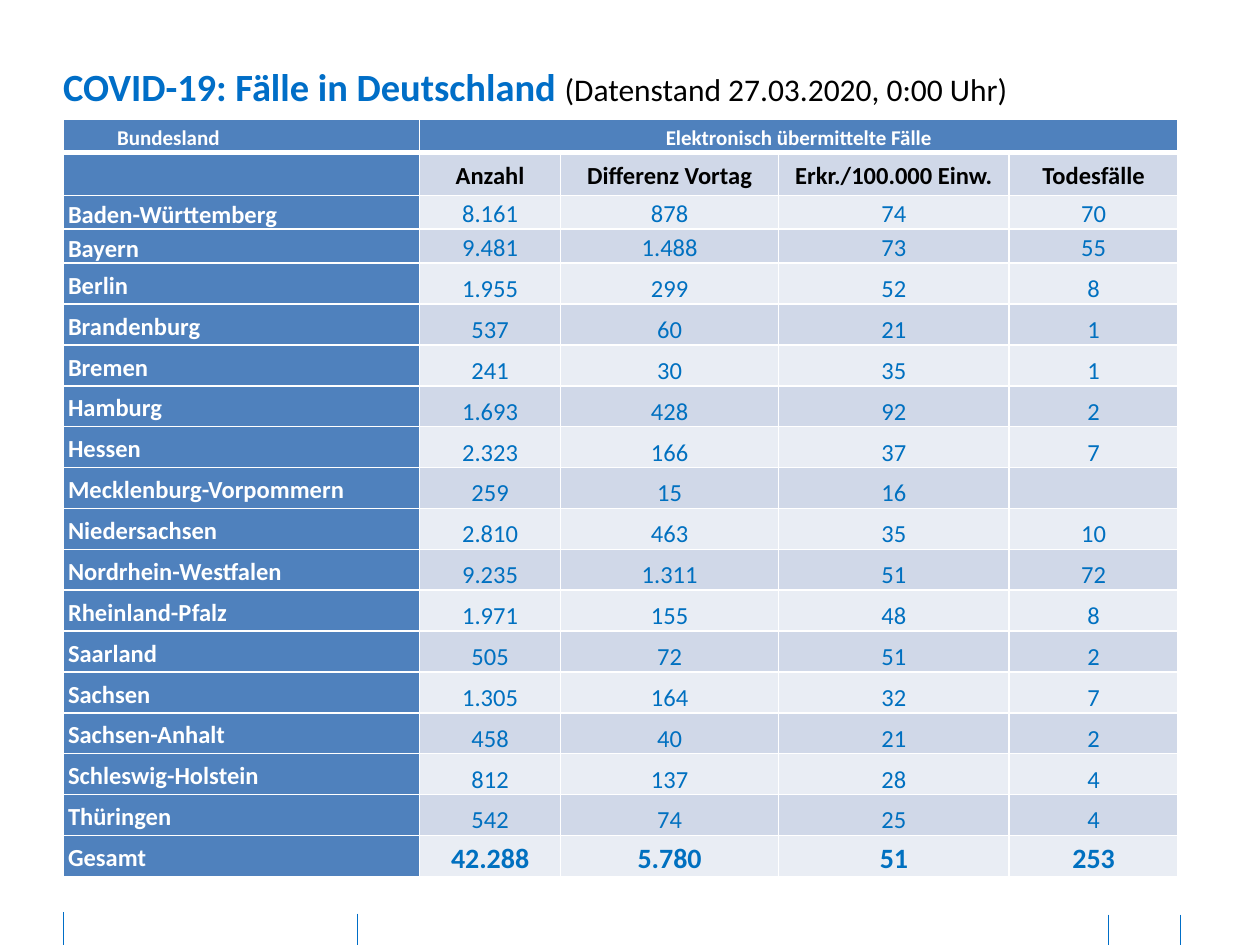
from lxml import etree
from pptx import Presentation
from pptx import util as u
from pptx.dml.color import RGBColor
from pptx.enum import shapes, text
from pptx.oxml.ns import qn

BRAND, HEADER, VALUE = "006EC7", "4F81BD", "0070C0"
WHITE, BLACK = "FFFFFF", "000000"
BANDS = ("E9EDF4", "D0D8E8")
COLUMNS = (2.83, 1.12, 1.73, 1.83, 1.34)
HEADINGS = ("Anzahl", "Differenz Vortag", "Erkr./100.000 Einw.", "Todesfälle")
CASES = (
    ("Baden-Württemberg", "8.161", "878", "74", "70"),
    ("Bayern", "9.481", "1.488", "73", "55"),
    ("Berlin", "1.955", "299", "52", "8"),
    ("Brandenburg", "537", "60", "21", "1"),
    ("Bremen", "241", "30", "35", "1"),
    ("Hamburg", "1.693", "428", "92", "2"),
    ("Hessen", "2.323", "166", "37", "7"),
    ("Mecklenburg-Vorpommern", "259", "15", "16", ""),
    ("Niedersachsen", "2.810", "463", "35", "10"),
    ("Nordrhein-Westfalen", "9.235", "1.311", "51", "72"),
    ("Rheinland-Pfalz", "1.971", "155", "48", "8"),
    ("Saarland", "505", "72", "51", "2"),
    ("Sachsen", "1.305", "164", "32", "7"),
    ("Sachsen-Anhalt", "458", "40", "21", "2"),
    ("Schleswig-Holstein", "812", "137", "28", "4"),
    ("Thüringen", "542", "74", "25", "4"),
    ("Gesamt", "42.288", "5.780", "51", "253"),
)


def rgb(value):
    """Turn a hex string into a colour."""
    return RGBColor.from_string(value)


def add_run(p, words, size, color, bold):
    """Append one styled run to a paragraph."""
    r = p.add_run()
    r.text = words
    r.font.name = "Calibri"
    r.font.size = u.Pt(size)
    r.font.bold = bold
    r.font.color.rgb = rgb(color)


def add_title(s, left, top, width, height):
    """Place the headline and its date in the given box."""
    sp = s.shapes.add_textbox(*map(u.Inches, (left, top, width, height)))
    tf = sp.text_frame
    tf.word_wrap = True
    tf.auto_size = text.MSO_AUTO_SIZE.SHAPE_TO_FIT_TEXT
    tf.margin_left = tf.margin_right = tf.margin_top = tf.margin_bottom = 0
    p = tf.paragraphs[0]
    add_run(p, "COVID-19: Fälle in Deutschland ", 22, BRAND, True)
    add_run(p, "(Datenstand 27.03.2020, 0:00 Uhr)", 18, BLACK, False)


def set_borders(cell, top=1, bottom=1):
    """Draw white borders on all sides of a cell."""
    tc_pr = cell._tc.get_or_add_tcPr()
    sides = (("lnL", 1), ("lnR", 1), ("lnT", top), ("lnB", bottom))
    for i, (side, points) in enumerate(sides):
        ln = etree.Element(qn(f"a:{side}"), w=str(u.Pt(points)))
        fill = etree.SubElement(ln, qn("a:solidFill"))
        etree.SubElement(fill, qn("a:srgbClr"), val=WHITE)
        tc_pr.insert(i, ln)


def fill_cell(cell, words, fill, color=WHITE, size=14, bold=True, centred=True, numeric=False):
    """Style a cell as a label or a number and write its text."""
    cell.fill.solid()
    cell.fill.fore_color.rgb = rgb(fill)
    cell.margin_left = cell.margin_right = u.Inches(0 if numeric else 0.04)
    cell.margin_top = cell.margin_bottom = 0
    cell.vertical_anchor = text.MSO_ANCHOR.BOTTOM if numeric else text.MSO_ANCHOR.MIDDLE
    p = cell.text_frame.paragraphs[0]
    p.alignment = text.PP_ALIGN.CENTER if centred else text.PP_ALIGN.LEFT
    if not numeric:
        p.line_spacing = 1.15
    if words:
        add_run(p, words, size, color, bold)
    else:
        etree.SubElement(p._p, qn("a:endParaRPr"), sz=str(size * 100))


def add_case_table(s, left, top, width, height):
    """Place the table of cases per state in the given box."""
    box = map(u.Inches, (left, top, width, height))
    table = s.shapes.add_table(len(CASES) + 2, len(COLUMNS), *box).table
    table.first_row = table.horz_banding = False
    for column, column_width in zip(table.columns, COLUMNS):
        column.width = u.Inches(column_width)
    heights = [0.26, 0.34, 0.27, 0.27]
    tall_rows = len(CASES) + 2 - len(heights)
    heights += [(height - sum(heights)) / tall_rows] * tall_rows
    for row, row_height in zip(table.rows, heights):
        row.height = u.Inches(row_height)

    table.cell(0, 1).merge(table.cell(0, 4))
    fill_cell(table.cell(0, 0), "Bundesland", HEADER, size=12, centred=False)
    p = table.cell(0, 0).text_frame.paragraphs[0]
    p._p.get_or_add_pPr().set("indent", str(u.Inches(0.39)))
    fill_cell(table.cell(0, 1), "Elektronisch übermittelte Fälle", HEADER, size=12)
    fill_cell(table.cell(1, 0), "", HEADER)
    for c, heading in enumerate(HEADINGS, 1):
        fill_cell(table.cell(1, c), heading, BANDS[1], BLACK)

    for i, (state, *values) in enumerate(CASES):
        total = state == "Gesamt"
        fill_cell(table.cell(i + 2, 0), state, HEADER, centred=False)
        for c, value in enumerate(values, 1):
            fill_cell(table.cell(i + 2, c), value, BANDS[i % 2], VALUE,
                      size=16 if total else 14, bold=total, numeric=True)

    for i, row in enumerate(table.rows):
        for cell in row.cells:
            set_borders(cell, top=3 if i == 1 else 1, bottom=3 if i == 0 else 1)


def add_footer_rules(s, bottom, rules):
    """Draw vertical rules from each given top down to the bottom."""
    for x, top in rules:
        sp = s.shapes.add_connector(shapes.MSO_CONNECTOR.STRAIGHT,
                                    *map(u.Inches, (x, top, x, bottom)))
        sp.line.color.rgb = rgb(BRAND)
        sp.line.width = u.Pt(0.5)
        etree.SubElement(sp._element.spPr, qn("a:effectLst"))


def main():
    """Build the slide and save it."""
    prs = Presentation()
    prs.slide_width, prs.slide_height = u.Inches(10), u.Inches(7.5)
    s = prs.slides.add_slide(prs.slide_layouts[6])
    add_footer_rules(s, 7.5, ((2.84, 7.25), (0.5, 7.24), (9.37, 7.26), (8.8, 7.26)))
    add_title(s, 0.5, 0.5, 8.85, 0.37)
    add_case_table(s, 0.5, 0.95, 8.85, 6.01)
    prs.save("out.pptx")


if __name__ == "__main__":
    main()
